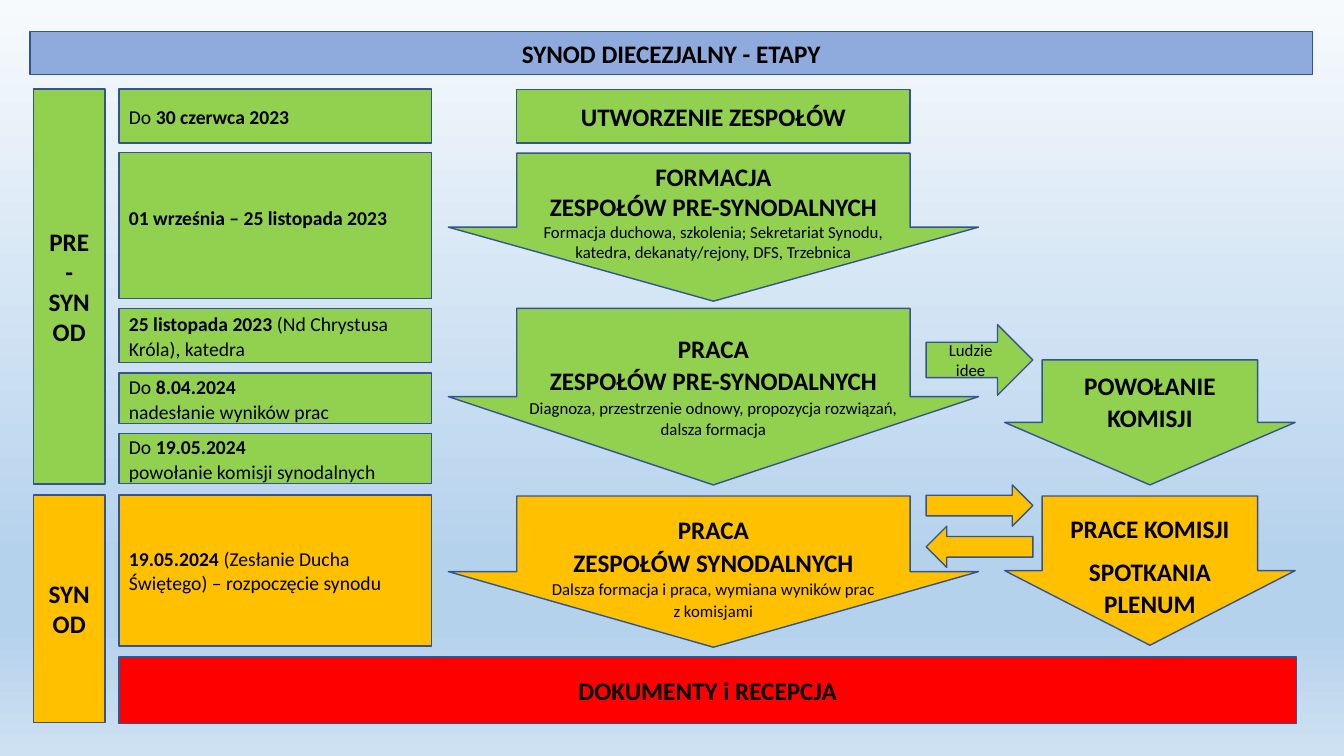
from lxml.etree import SubElement
from pptx import Presentation
from pptx.dml.color import RGBColor
from pptx.enum.shapes import MSO_SHAPE as Preset
from pptx.enum.text import MSO_ANCHOR as Anchor, MSO_AUTO_SIZE as AutoSize, PP_ALIGN as Align
from pptx.oxml.ns import qn
from pptx.util import Cm, Pt

GREEN, AMBER, RED, BLUE = "92D050", "FFC000", "FF0000", "8FAADC"
OUTLINE, BLACK = "325491", "000000"
SKY = [(0, "F7FAFD"), (74, "B5D2EC"), (83, "B5D2EC"), (100, "CEE1F2")]


def rgb(value):
    """Turn a hex string into a colour."""
    return RGBColor.from_string(value)


def style(shape, fill, anchor=Anchor.MIDDLE, top=0.0, bottom=0.0):
    """Give a shape its fill, outline and text frame settings."""
    shape.shadow.inherit = False
    shape.fill.solid()
    shape.fill.fore_color.rgb = rgb(fill)
    shape.line.color.rgb = rgb(OUTLINE)
    shape.line.width = Pt(1)
    frame = shape.text_frame
    frame.word_wrap = True
    frame.auto_size = AutoSize.NONE
    frame.vertical_anchor = anchor
    frame.margin_left = frame.margin_right = Cm(0.25)
    frame.margin_top, frame.margin_bottom = Cm(top), Cm(bottom)
    return shape


def block(slide, box, fill, preset=Preset.RECTANGLE, **frame_format):
    """Add a filled preset shape in a box given in centimetres."""
    return style(slide.shapes.add_shape(preset, *map(Cm, box)), fill, **frame_format)


def write(shape, text, size=18, bold=True, align=Align.CENTER, spacing=1.0,
          before=0, same_line=False):
    """Append text to a shape, on a new line unless told otherwise."""
    frame = shape.text_frame
    paragraph = frame.paragraphs[-1]
    if paragraph.runs and not same_line:
        paragraph = frame.add_paragraph()
    paragraph.alignment = align
    paragraph.line_spacing = spacing
    paragraph.space_before, paragraph.space_after = Pt(before), Pt(0)
    run = paragraph.add_run()
    run.text = text
    run.font.name, run.font.size, run.font.bold = "Calibri", Pt(size), bold
    run.font.color.rgb = rgb(BLACK)


def paint_background(slide):
    """Fill the background with a vertical sky gradient."""
    fill = slide.background.fill
    fill.gradient()
    fill.gradient_angle = 270
    stops = next(slide.element.iter(qn("a:gsLst")))
    for stop in list(stops):
        stops.remove(stop)
    for percent, colour in SKY:
        stop = SubElement(stops, qn("a:gs"), pos=str(percent * 1000))
        SubElement(stop, qn("a:srgbClr"), val=colour)


def add_heading(slide, box):
    """Place the title placeholder as a banner."""
    heading = slide.shapes.title
    heading.left, heading.top, heading.width, heading.height = map(Cm, box)
    write(style(heading, BLUE), "SYNOD DIECEZJALNY - ETAPY")


def add_phases(slide, box):
    """Stack the two phase bars."""
    left, top, width, height = box
    phases = [(0, 9.96, GREEN, ["PRE", "- SYNOD"]),
              (10.23, height - 10.23, AMBER, ["SYNOD"])]
    for offset, length, fill, words in phases:
        phase = block(slide, (left, top + offset, width, length), fill)
        for word in words:
            write(phase, word)


def add_dates(slide, box):
    """Stack the date cells; each line is a list of text and weight pairs."""
    left, top, width, _ = box
    dates = [
        (0, 1.37, GREEN, 0, [[("Do ", False), ("30 czerwca 2023", True)]]),
        (1.6, 3.68, GREEN, 0.42, [[("01 września – 25 listopada 2023", True)]]),
        (5.53, 1.37, GREEN, 0, [[("25 listopada 2023 ", True),
                                 ("(Nd Chrystusa Króla), katedra", False)]]),
        (7.16, 1.27, GREEN, 0, [[("Do ", False), ("8.04.2024", True)],
                                [("nadesłanie wyników prac", False)]]),
        (8.68, 1.27, GREEN, 0, [[("Do ", False), ("19.05.2024", True)],
                                [("powołanie komisji synodalnych", False)]]),
        (10.23, 3.81, AMBER, 0, [[("19.05.2024", True),
                                  (" (Zesłanie Ducha Świętego) – rozpoczęcie synodu", False)]]),
    ]
    for offset, height, fill, bottom, lines in dates:
        date = block(slide, (left, top + offset, width, height), fill, bottom=bottom)
        spacing = 1.0 if fill == AMBER else 1.07
        for line in lines:
            for index, (text, bold) in enumerate(line):
                write(date, text, size=14, bold=bold, align=Align.LEFT,
                      spacing=spacing, same_line=index > 0)


def add_stage(slide, box, fill, top):
    """Add a wide down arrow whose text starts at the given inset."""
    stage = block(slide, box, fill, Preset.DOWN_ARROW, anchor=Anchor.TOP, top=top)
    stage.adjustments[0], stage.adjustments[1] = 0.742, 0.5
    return stage


def add_teams(slide, box):
    """Place the team box and the three team stages below it."""
    left, top, width, _ = box
    shaft = width * 0.742
    creation = block(slide, (left + (width - shaft) / 2, top, shaft, 1.35), GREEN)
    write(creation, "UTWORZENIE ZESPOŁÓW")
    stages = [
        (1.6, 3.73, GREEN, 0.2, 1.0, ["FORMACJA", "ZESPOŁÓW PRE-SYNODALNYCH"],
         ["Formacja duchowa, szkolenia; Sekretariat Synodu, katedra, dekanaty/rejony, DFS, Trzebnica"]),
        (5.51, 4.45, GREEN, 0.58, 1.07, ["PRACA", "ZESPOŁÓW PRE-SYNODALNYCH"],
         ["Diagnoza, przestrzenie odnowy, propozycja rozwiązań, dalsza formacja"]),
        (10.24, 3.81, AMBER, 0.42, 1.07, ["PRACA", "ZESPOŁÓW SYNODALNYCH"],
         ["Dalsza formacja i praca, wymiana wyników prac", "z komisjami"]),
    ]
    for offset, height, fill, inset, spacing, names, details in stages:
        stage = add_stage(slide, (left, top + offset, width, height), fill, inset)
        for name in names:
            write(stage, name, spacing=spacing)
        for detail in details:
            write(stage, detail, size=12, bold=False, spacing=spacing)


def add_commissions(slide, box):
    """Place the two commission stages."""
    left, top, width, _ = box
    appointment = add_stage(slide, (left, top, width, 3.15), GREEN, 0.2)
    for word in ("POWOŁANIE", "KOMISJI"):
        write(appointment, word, spacing=1.07)
    work = add_stage(slide, (left, top + 3.43, width, 3.76), AMBER, 0.37)
    write(work, "PRACE KOMISJI", spacing=1.07)
    write(work, "SPOTKANIA PLENUM", spacing=1.07, before=8)


def add_exchange(slide, box):
    """Place the arrows between teams and commissions."""
    left, top, width, _ = box
    people = block(slide, (left, top, width, 1.78), GREEN, Preset.RIGHT_ARROW)
    write(people, "Ludzie idee", size=12, bold=False)
    for index, turn in enumerate((0, 180)):
        flow = block(slide, (left, top + 4.04 + index * 1.04, width, 1.04),
                     AMBER, Preset.RIGHT_ARROW)
        flow.rotation = turn


def add_documents(slide, box):
    """Place the closing bar."""
    write(block(slide, box, RED), "DOKUMENTY i RECEPCJA")


def main():
    """Build and save the slide."""
    deck = Presentation()
    deck.slide_width, deck.slide_height = Cm(33.87), Cm(19.05)
    slide = deck.slides.add_slide(deck.slide_layouts[5])
    paint_background(slide)
    add_heading(slide, (0.76, 0.79, 32.31, 1.09))
    add_phases(slide, (0.84, 2.24, 1.81, 15.97))
    add_dates(slide, (3, 2.24, 7.87, 14.04))
    add_teams(slide, (11.3, 2.26, 13.36, 14.05))
    add_commissions(slide, (25.32, 9.07, 7.32, 7.19))
    add_exchange(slide, (23.34, 8.18, 2.69, 6.12))
    add_documents(slide, (3, 16.56, 29.67, 1.68))
    deck.save("out.pptx")


if __name__ == "__main__":
    main()
